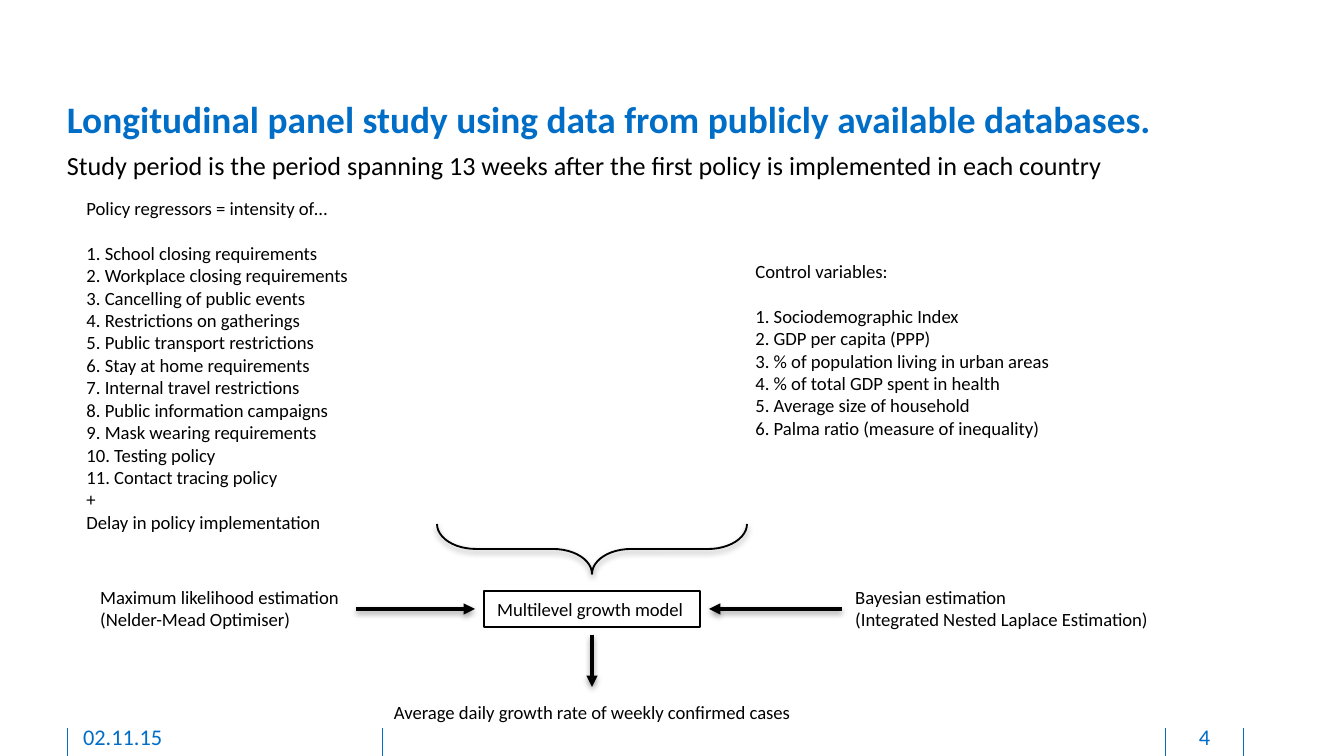
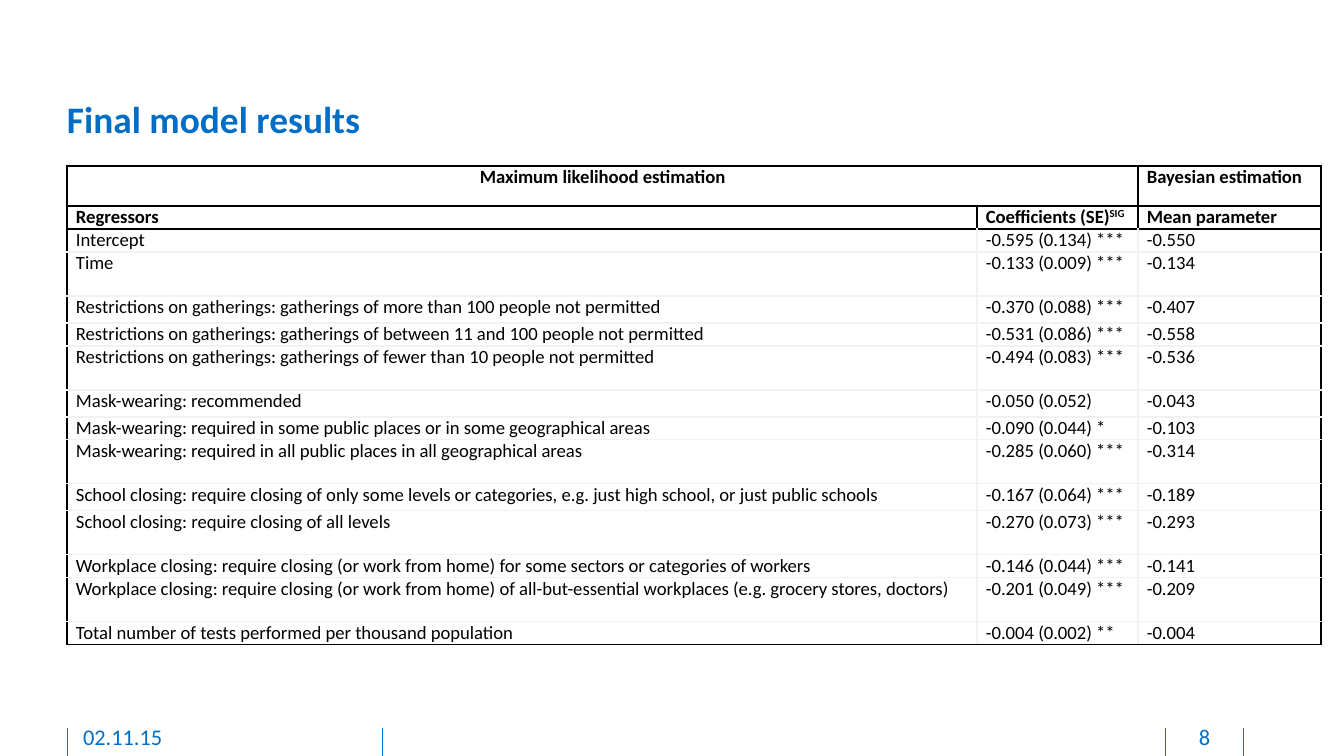
from dataclasses import dataclass

from lxml.etree import SubElement
from pptx import Presentation
from pptx.dml.color import RGBColor
from pptx.enum.shapes import MSO_CONNECTOR, MSO_SHAPE
from pptx.enum.text import MSO_ANCHOR, MSO_AUTO_SIZE, PP_ALIGN
from pptx.oxml.ns import qn
from pptx.util import Emu, Pt


@dataclass(frozen=True)
class Theme:
    font: str = "Calibri"
    blue: str = "006EC7"
    black: str = "000000"
    white: str = "FFFFFF"
    pale: str = "F2F2F2"
    title_size: int = 20
    subtitle_size: int = 14
    footer_size: int = 12
    body_size: int = 10


THEME = Theme()
EMU_PER_PX = 914400 / 134.4

TITLE = {"size": THEME.title_size, "color": THEME.blue, "bold": True}
SUBTITLE = {"size": THEME.subtitle_size, "color": THEME.black, "bold": False}
FOOTER = {"size": THEME.footer_size, "color": THEME.blue, "bold": False}
BODY = {"size": THEME.body_size, "color": THEME.black, "bold": False}
HEADING = {**BODY, "bold": True}

POLICIES = [
    "School closing requirements", "Workplace closing requirements",
    "Cancelling of public events", "Restrictions on gatherings",
    "Public transport restrictions", "Stay at home requirements",
    "Internal travel restrictions", "Public information campaigns",
    "Mask wearing requirements", "Testing policy", "Contact tracing policy",
]
CONTROLS = [
    "Sociodemographic Index", "GDP per capita (PPP)",
    "% of population living in urban areas",
    "% of total GDP spent in health", "Average size of household",
    "Palma ratio (measure of inequality)",
]

# Each result: row height, regressor, coefficient, mean parameter
RESULTS = [
    (23, "Intercept", "-0.595 (0.134) ***", "-0.550"),
    (44, "Time", "-0.133 (0.009) ***", "-0.134"),
    (27, "Restrictions on gatherings: gatherings of more than 100 people not permitted",
     "-0.370 (0.088) ***", "-0.407"),
    (23, "Restrictions on gatherings: gatherings of between 11 and 100 people not permitted",
     "-0.531 (0.086) ***", "-0.558"),
    (44, "Restrictions on gatherings: gatherings of fewer than 10 people not permitted",
     "-0.494 (0.083) ***", "-0.536"),
    (27, "Mask-wearing: recommended", "-0.050 (0.052)", "-0.043"),
    (23, "Mask-wearing: required in some public places or in some geographical areas",
     "-0.090 (0.044) *", "-0.103"),
    (44, "Mask-wearing: required in all public places in all geographical areas",
     "-0.285 (0.060) ***", "-0.314"),
    (27, "School closing: require closing of only some levels or categories, "
         "e.g. just high school, or just public schools",
     "-0.167 (0.064) ***", "-0.189"),
    (44, "School closing: require closing of all levels", "-0.270 (0.073) ***", "-0.293"),
    (23, "Workplace closing: require closing (or work from home) "
         "for some sectors or categories of workers",
     "-0.146 (0.044) ***", "-0.141"),
    (44, "Workplace closing: require closing (or work from home) "
         "of all-but-essential workplaces (e.g. grocery stores, doctors)",
     "-0.201 (0.049) ***", "-0.209"),
    (23, "Total number of tests performed per thousand population",
     "-0.004 (0.002) **", "-0.004"),
]


def px(length):
    return Emu(round(length * EMU_PER_PX))


def color(value):
    return RGBColor.from_string(value)


def set_attributes(target, values):
    for name, value in values.items():
        setattr(target, name, value)


def place(shape, left, top, width, height):
    set_attributes(shape, {"left": px(left), "top": px(top),
                           "width": px(width), "height": px(height)})


def add_run(paragraph, text, style):
    run = paragraph.add_run()
    run.text = text
    set_attributes(run.font, {"name": THEME.font, "size": Pt(style["size"]),
                              "bold": style["bold"]})
    run.font.color.rgb = color(style["color"])
    return run


def fill_frame(frame, lines, align=PP_ALIGN.LEFT, margins=None, anchor=MSO_ANCHOR.TOP,
               line_spacing=None):
    """Write (text, style, space before) lines into a text frame."""
    set_attributes(frame, {"word_wrap": True, "auto_size": MSO_AUTO_SIZE.NONE,
                           "vertical_anchor": anchor})
    if margins:
        names = ("margin_left", "margin_top", "margin_right", "margin_bottom")
        set_attributes(frame, dict(zip(names, map(px, margins))))
    for index, (text, style, space) in enumerate(lines):
        paragraph = frame.paragraphs[0] if index == 0 else frame.add_paragraph()
        properties = paragraph._p.get_or_add_pPr()
        properties.set("marL", "0")
        properties.set("indent", "0")
        SubElement(properties, qn("a:buNone"))
        set_attributes(paragraph, {"alignment": align, "space_before": Pt(space),
                                   "line_spacing": line_spacing})
        add_run(paragraph, text, style)


def add_label(slide, box, texts, style=BODY, **options):
    label = slide.shapes.add_textbox(*map(px, box))
    fill_frame(label.text_frame, [(text, style, 0) for text in texts], **options)
    return label


def set_title(slide, height, lines):
    place(slide.shapes.title, 67, 101, 1173, height)
    fill_frame(slide.shapes.title.text_frame, lines, margins=(0, 0, 0, 0),
               line_spacing=Pt(21.5))


def fill_list(placeholder, box, heading, items, closing=()):
    """Heading, a gap, numbered items and closing lines."""
    place(placeholder, *box)
    numbered = [f"{number}. {item}" for number, item in enumerate(items, 1)]
    lines = [(heading, BODY, 0)]
    lines += [(text, BODY, 0 if index else 12)
              for index, text in enumerate([*numbered, *closing])]
    fill_frame(placeholder.text_frame, lines)


def add_effects(shape, shadow):
    effects = SubElement(shape.element.spPr, qn("a:effectLst"))
    if shadow:
        outer = SubElement(effects, qn("a:outerShdw"), blurRad="40000", dist="20000",
                           dir="5400000", rotWithShape="0")
        black = SubElement(outer, qn("a:srgbClr"), val=THEME.black)
        SubElement(black, qn("a:alpha"), val="38000")


def add_line(slide, start, end, line_color, width, arrow=False):
    line = slide.shapes.add_connector(MSO_CONNECTOR.STRAIGHT, *map(px, (*start, *end)))
    line.line.color.rgb = color(line_color)
    line.line.width = Pt(width)
    if arrow:
        SubElement(line.line._get_or_add_ln(), qn("a:tailEnd"), type="triangle")
    add_effects(line, shadow=arrow)
    return line


def add_arrow(slide, start, end):
    return add_line(slide, start, end, THEME.black, 2, arrow=True)


def add_footer(slide, number):
    for left in (67, 382, 1165, 1243):
        add_line(slide, (left, 728), (left, 756), THEME.blue, 0.5)
    margins = (0, 0, 0, 7)
    add_label(slide, (83, 723, 273, 28), ["02.11.15"], FOOTER, margins=margins)
    add_label(slide, (1168, 723, 73, 28), [number], FOOTER, margins=margins,
              align=PP_ALIGN.CENTER)


def add_brace(slide, box):
    brace = slide.shapes.add_shape(MSO_SHAPE.RIGHT_BRACE, *map(px, box))
    brace.rotation = 90
    brace.adjustments[0] = 0.78
    brace.adjustments[1] = 0.5
    brace.fill.background()
    brace.line.color.rgb = color(THEME.black)
    brace.line.width = Pt(1)
    add_effects(brace, shadow=True)


def add_box(slide, box, text):
    rectangle = slide.shapes.add_shape(MSO_SHAPE.RECTANGLE, *map(px, box))
    rectangle.shadow.inherit = False
    rectangle.fill.background()
    rectangle.line.color.rgb = color(THEME.black)
    rectangle.line.width = Pt(0.75)
    fill_frame(rectangle.text_frame, [(text, BODY, 0)], anchor=MSO_ANCHOR.MIDDLE)


def set_borders(cell, colors):
    properties = cell._tc.get_or_add_tcPr()
    for index, (side, value) in enumerate(colors.items()):
        border = SubElement(properties, qn(f"a:ln{side}"), w="12700")
        fill = SubElement(border, qn("a:solidFill"))
        SubElement(fill, qn("a:srgbClr"), val=value)
        properties.insert(index, border)


def format_cell(cell, text, style, align):
    cell.fill.solid()
    cell.fill.fore_color.rgb = color(THEME.white)
    set_attributes(cell, {"margin_left": px(9), "margin_right": px(9),
                          "margin_top": 0, "margin_bottom": 0})
    paragraph = cell.text_frame.paragraphs[0]
    set_attributes(paragraph, {"alignment": align, "space_after": Pt(8)})
    if text:
        add_run(paragraph, text, style)


def add_results_table(slide):
    headers = [(40, "Maximum likelihood estimation", "", "Bayesian estimation"),
               (23, "Regressors", "Coefficients (SE)", "Mean parameter")]
    rows = headers + RESULTS
    widths = (910, 161, 183)
    frame = slide.shapes.add_table(
        len(rows), len(widths),
        *map(px, (67, 166, sum(widths), sum(row[0] for row in rows))))
    table = frame.table
    set_attributes(table, {"first_row": False, "horz_banding": False})
    for column, width in zip(table.columns, widths):
        column.width = px(width)

    # Headers and outer edges are black, inner edges pale
    last_row, last_column = len(rows) - 1, len(widths) - 1
    for row_index, (height, *texts) in enumerate(rows):
        table.rows[row_index].height = px(height)
        header = row_index < len(headers)
        for column_index, text in enumerate(texts):
            cell = table.cell(row_index, column_index)
            spanning = row_index == 0 and column_index == 0
            format_cell(cell, text, HEADING if header else BODY,
                        PP_ALIGN.CENTER if spanning else PP_ALIGN.LEFT)
            dark = {"L": column_index == 0, "R": column_index == last_column,
                    "T": row_index == len(headers), "B": row_index == last_row}
            set_borders(cell, {side: THEME.black if header or edge else THEME.pale
                               for side, edge in dark.items()})
    table.cell(0, 0).merge(table.cell(0, 1))
    significance = add_run(table.cell(1, 1).text_frame.paragraphs[0], "SIG", HEADING)
    significance._r.get_or_add_rPr().set("baseline", "30000")


def build_study_slide(presentation):
    slide = presentation.slides.add_slide(presentation.slide_layouts[3])
    add_footer(slide, "4")
    set_title(slide, 125, [
        ("Longitudinal panel study using data from publicly available databases.", TITLE, 0),
        ("Study period is the period spanning 13 weeks after the first policy "
         "is implemented in each country", SUBTITLE, 0)])

    # Regressors and controls
    fill_list(slide.placeholders[1], (73, 190, 378, 353),
              "Policy regressors = intensity of…", POLICIES,
              ("+", "Delay in policy implementation"))
    fill_list(slide.placeholders[2], (742, 253, 406, 195), "Control variables:", CONTROLS)

    # Model diagram
    add_brace(slide, (567, 394, 50, 310))
    add_box(slide, (484, 591, 216, 36), "Multilevel growth model")
    likelihood = add_label(slide, (87, 579, 269, 60),
                           ["Maximum likelihood estimation", "(Nelder-Mead Optimiser)"])
    bayesian = add_label(slide, (842, 579, 326, 60),
                         ["Bayesian estimation", "(Integrated Nested Laplace Estimation)"])
    add_label(slide, (374, 694, 436, 36),
              ["Average daily growth rate of weekly confirmed cases"], align=PP_ALIGN.CENTER)
    add_arrow(slide, (356, 609), (475, 609)).begin_connect(likelihood, 3)
    add_arrow(slide, (842, 609), (709, 609)).begin_connect(bayesian, 1)
    add_arrow(slide, (592, 635), (592, 687))


def build_results_slide(presentation):
    slide = presentation.slides.add_slide(presentation.slide_layouts[5])
    add_footer(slide, "8")
    set_title(slide, 42, [("Final model results", TITLE, 0)])
    add_results_table(slide)


def main():
    presentation = Presentation()
    set_attributes(presentation, {"slide_width": px(1344), "slide_height": px(756)})
    build_study_slide(presentation)
    build_results_slide(presentation)
    presentation.save("out.pptx")


if __name__ == "__main__":
    main()
